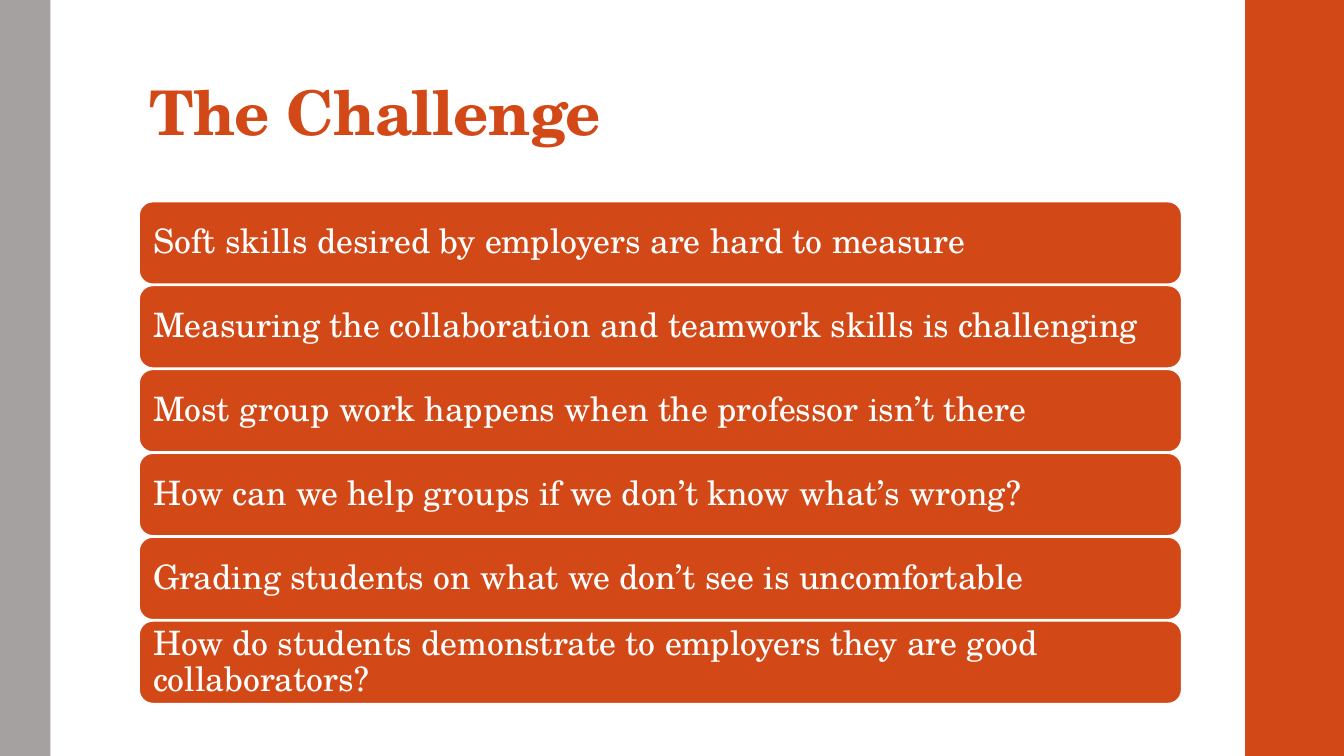
from dataclasses import dataclass

from pptx import Presentation
from pptx.dml.color import RGBColor
from pptx.enum.shapes import MSO_SHAPE as Shape
from pptx.enum.text import MSO_ANCHOR as Anchor, MSO_AUTO_SIZE as AutoSize, PP_ALIGN as Align
from pptx.util import Inches, Pt


@dataclass(frozen=True)
class Theme:
    font: str = "TeX Gyre Schola"
    accent: str = "D34817"
    side: str = "A6A1A1"
    light: str = "FFFFFF"
    title_size: int = 44
    row_size: int = 24
    outline: float = 1.1


CHALLENGES = [
    "Soft skills desired by employers are hard to measure",
    "Measuring the collaboration and teamwork skills is challenging",
    "Most group work happens when the professor isn’t there",
    "How can we help groups if we don’t know what’s wrong?",
    "Grading students on what we don’t see is uncomfortable",
    "How do students demonstrate to employers they are good collaborators?",
]
LEFT, ROW_WIDTH, ROW_HEIGHT = 1.38, 10.34, 0.82
FIRST_TOP, LAST_TOP = 2, 6.16


def write_text(box, text, *, font, size, color, bold=False, spacing=0,
               anchor=Anchor.MIDDLE, insets=(0.1, 0.1, 0.1, 0.1)):
    frame = box.text_frame
    frame.word_wrap = True
    frame.auto_size = AutoSize.NONE
    frame.vertical_anchor = anchor
    (frame.margin_left, frame.margin_top,
     frame.margin_right, frame.margin_bottom) = map(Inches, insets)
    para = frame.paragraphs[0]
    para.alignment = Align.LEFT
    para.line_spacing = 0.9
    span = para.add_run()
    span.text = text
    span.font.name = font
    span.font.size = Pt(size)
    span.font.bold = bold
    span.font.color.rgb = RGBColor.from_string(color)
    if spacing:
        span._r.get_or_add_rPr().set("spc", str(round(spacing * 100)))


class SlideBuilder:
    def __init__(self, page, theme):
        self.page = page
        self.theme = theme

    def block(self, kind, left, top, width, height, color):
        box = self.page.shapes.add_shape(kind, *map(Inches, (left, top, width, height)))
        box.shadow.inherit = False
        box.fill.solid()
        box.fill.fore_color.rgb = RGBColor.from_string(color)
        box.line.fill.background()
        return box

    def bar(self, left, width, color):
        self.block(Shape.RECTANGLE, left, 0, width, 7.5, color)

    def title(self, text):
        box = self.page.shapes.title
        box.left, box.top, box.width, box.height = map(Inches, (LEFT, 0, 10.6, 1.53))
        write_text(box, text, font=self.theme.font, size=self.theme.title_size,
                   color=self.theme.accent, bold=True, spacing=-0.5,
                   anchor=Anchor.BOTTOM, insets=(0.1, 0.03, 0.1, 0.05))

    def row(self, text, top):
        box = self.block(Shape.ROUNDED_RECTANGLE, LEFT, top, ROW_WIDTH, ROW_HEIGHT,
                         self.theme.accent)
        box.line.color.rgb = RGBColor.from_string(self.theme.light)
        box.line.width = Pt(self.theme.outline)
        write_text(box, text, font=self.theme.font, size=self.theme.row_size,
                   color=self.theme.light)


def main():
    deck = Presentation()
    deck.slide_width, deck.slide_height = Inches(13.33), Inches(7.5)
    theme = Theme()
    builder = SlideBuilder(deck.slides.add_slide(deck.slide_layouts[5]), theme)
    builder.bar(12.35, 1, theme.accent)
    builder.bar(0, 0.5, theme.side)
    builder.title("The Challenge")
    pitch = (LAST_TOP - FIRST_TOP) / (len(CHALLENGES) - 1)
    for index, challenge in enumerate(CHALLENGES):
        builder.row(challenge, FIRST_TOP + index * pitch)
    deck.save("out.pptx")


if __name__ == "__main__":
    main()
